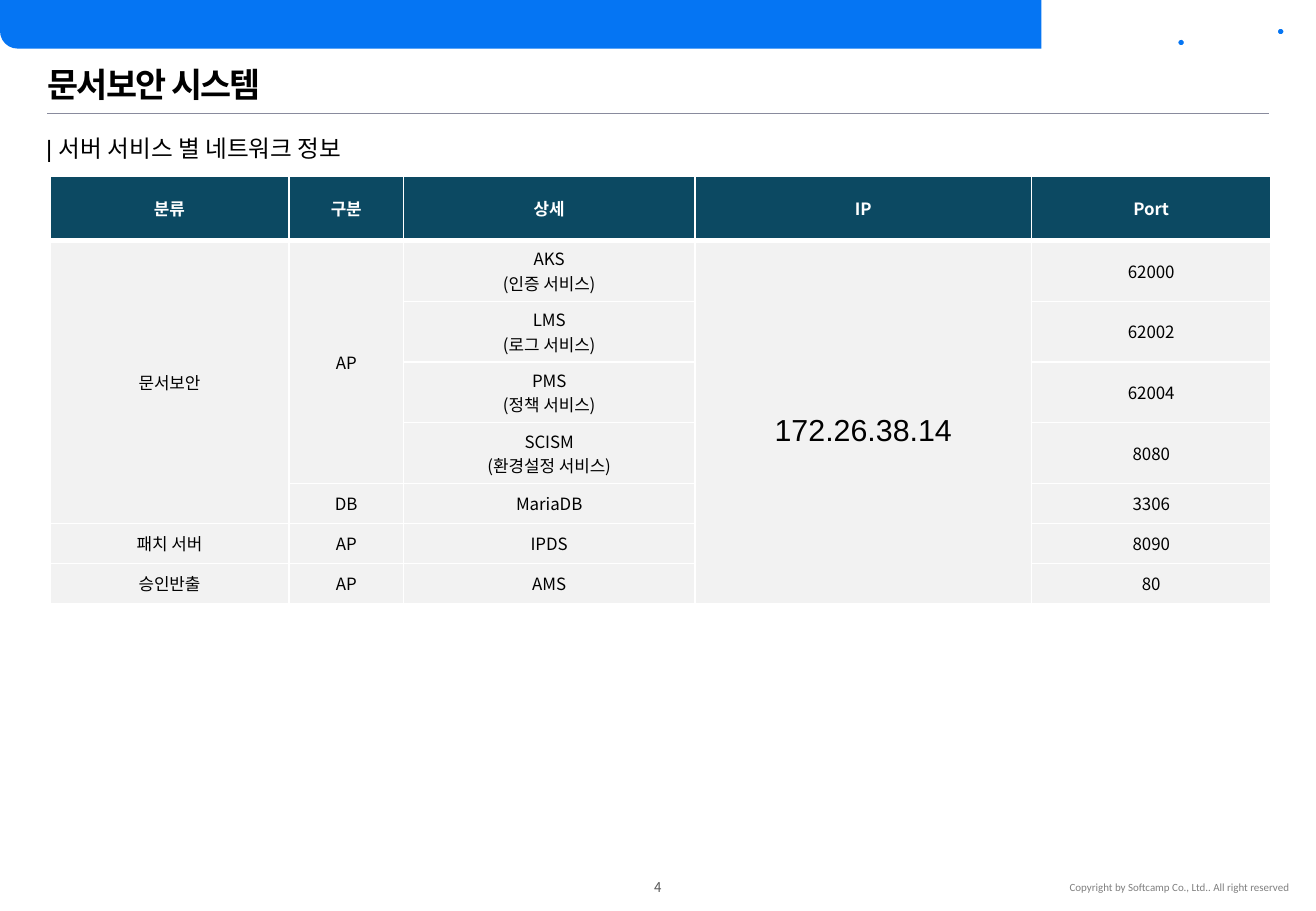
import lxml.etree
import pptx
import pptx.dml.color
import pptx.enum.shapes
import pptx.enum.text
import pptx.oxml.ns
import pptx.util

RGB = pptx.dml.color.RGBColor
Inches = pptx.util.Inches
Pt = pptx.util.Pt
Align = pptx.enum.text.PP_ALIGN
Shape = pptx.enum.shapes.MSO_SHAPE
MIDDLE = pptx.enum.text.MSO_ANCHOR.MIDDLE
qn = pptx.oxml.ns.qn

BLUE = RGB(0x05, 0x75, 0xF3)
NAVY = RGB(0x0C, 0x49, 0x62)
PALE = RGB(0xF2, 0xF2, 0xF2)
WHITE = RGB(0xFF, 0xFF, 0xFF)
BLACK = RGB(0, 0, 0)
RULE_GRAY = RGB(0x89, 0x8B, 0x9D)
PAGE_GRAY = RGB(0x59, 0x59, 0x59)
NOTICE_GRAY = RGB(0x80, 0x80, 0x80)
KOREAN = "Noto Sans CJK KR"

HEADERS = ["분류", "구분", "상세", "IP", "Port"]
SERVICES = [
    ["문서보안", "AP", "AKS\n(인증 서비스)", "172.26.38.14", "62000"],
    ["", "", "LMS\n(로그 서비스)", "", "62002"],
    ["", "", "PMS\n(정책 서비스)", "", "62004"],
    ["", "", "SCISM\n(환경설정 서비스)", "", "8080"],
    ["", "DB", "MariaDB", "", "3306"],
    ["패치 서버", "AP", "IPDS", "", "8090"],
    ["승인반출", "AP", "AMS", "", "80"],
]
COLUMN_WIDTHS = [1.97, 0.94, 2.4, 2.77, 1.97]
ROW_HEIGHTS = [0.53] + [0.5] * 4 + [0.33] * 3
MERGES = [(1, 0, 5, 0), (1, 1, 4, 1), (1, 3, 7, 3)]


class SlideBuilder:
    """Draws styled elements on the current slide."""

    def __init__(self, slide):
        self.slide = slide
        self.font = {"name": KOREAN, "size": Pt(10), "bold": False}

    def fill_text(self, frame, text, color=BLACK, align=Align.LEFT, line_spacing=1.0,
                  tracking=0, **font_format):
        frame.text = text
        for paragraph in frame.paragraphs:
            paragraph.alignment = align
            paragraph.line_spacing = line_spacing
            for run in paragraph.runs:
                for key, value in {**self.font, **font_format}.items():
                    setattr(run.font, key, value)
                run.font.color.rgb = color
                properties = run._r.get_or_add_rPr()
                lxml.etree.SubElement(properties, qn("a:ea"), typeface=KOREAN)
                if tracking:
                    properties.set("spc", str(tracking))

    def text(self, box, text, margins, wrap=True, **style):
        frame = self.slide.shapes.add_textbox(*map(Inches, box)).text_frame
        sides = ("margin_left", "margin_top", "margin_right", "margin_bottom")
        frame_format = dict(zip(sides, map(Inches, margins)),
                            word_wrap=wrap, vertical_anchor=MIDDLE)
        for key, value in frame_format.items():
            setattr(frame, key, value)
        self.fill_text(frame, text, **style)

    def shape(self, kind, box, fill, outline=None):
        shape = self.slide.shapes.add_shape(kind, *map(Inches, box))
        shape.shadow.inherit = False
        shape.fill.solid()
        shape.fill.fore_color.rgb = fill
        if outline is None:
            shape.line.fill.background()
        else:
            shape.line.color.rgb = outline
            shape.line.width = Pt(1)
        return shape

    def rule(self, left, right, y, color, width):
        line = self.slide.shapes.add_connector(
            pptx.enum.shapes.MSO_CONNECTOR.STRAIGHT,
            Inches(left), Inches(y), Inches(right), Inches(y))
        line.line.color.rgb = color
        line.line.width = Pt(width)
        lxml.etree.SubElement(line._element.spPr, qn("a:effectLst"))

    def borders(self, cell, top, bottom):
        properties = cell._tc.get_or_add_tcPr()
        for side, width in {"L": 1, "R": 1, "T": top, "B": bottom}.items():
            border = lxml.etree.SubElement(
                properties, qn(f"a:ln{side}"), w=str(Pt(width)))
            fill = lxml.etree.SubElement(border, qn("a:solidFill"))
            lxml.etree.SubElement(fill, qn("a:srgbClr"), val=str(WHITE))

    def table(self, left, top, rows, widths, heights, merges):
        table = self.slide.shapes.add_table(
            len(rows), len(widths), Inches(left), Inches(top),
            Inches(sum(widths)), Inches(sum(heights))).table
        table.first_row = table.horz_banding = False
        for column, width in zip(table.columns, widths):
            column.width = Inches(width)
        for row, height in zip(table.rows, heights):
            row.height = Inches(height)
        for r, row in enumerate(rows):
            for c, value in enumerate(row):
                cell = table.cell(r, c)
                cell.vertical_anchor = MIDDLE
                self.borders(cell, 3 if r == 1 else 1, 3 if r == 0 else 1)
                cell.fill.solid()
                cell.fill.fore_color.rgb = PALE if r else NAVY
                style = {"color": BLACK if r else WHITE, "bold": r == 0}
                if r and HEADERS[c] == "IP":
                    style.update(name="Arial", size=Pt(18), line_spacing=1.5)
                self.fill_text(cell.text_frame, value, align=Align.CENTER, **style)
        for r1, c1, r2, c2 in merges:
            table.cell(r1, c1).merge(table.cell(r2, c2))


def main():
    deck = pptx.Presentation()
    deck.slide_width, deck.slide_height = Inches(10.83), Inches(7.5)
    page = SlideBuilder(deck.slides.add_slide(deck.slide_layouts[6]))

    banner = page.shape(Shape.ROUND_1_RECTANGLE, (0, 0, 8.57, 0.4), BLUE)
    banner.adjustments[0] = 0.36
    banner.rotation = 180
    for x, y in [(9.69, 0.32), (10.51, 0.23)]:
        page.shape(Shape.OVAL, (x, y, 0.06, 0.06), BLUE, WHITE)

    page.rule(0.39, 10.44, 0.93, RULE_GRAY, 0.5)
    page.text((0.29, 0.46, 10.17, 0.5), "문서보안 시스템", (0.1, 0.05, 0.1, 0.05),
              name="Arial", size=Pt(20), bold=True, line_spacing=0.9, tracking=-100)
    page.text((0.26, 1.08, 10.31, 0.26), "| 서버 서비스 별 네트워크 정보",
              (0.12, 0, 0.12, 0), name="Arial", size=Pt(14), line_spacing=1.1)
    page.table(0.41, 1.45, [HEADERS] + SERVICES, COLUMN_WIDTHS, ROW_HEIGHTS, MERGES)

    page.text((5.26, 7.22, 0.31, 0.17), "4", (0, 0, 0, 0), wrap=False,
              size=Pt(8), color=PAGE_GRAY, align=Align.CENTER)
    page.text((8.77, 7.2, 1.94, 0.21),
              "Copyright by Softcamp Co., Ltd.. All right reserved",
              (0, 0.05, 0.1, 0.05), wrap=False, name="Calibri", size=Pt(6.5),
              color=NOTICE_GRAY, align=Align.RIGHT)
    deck.save("out.pptx")


if __name__ == "__main__":
    main()
